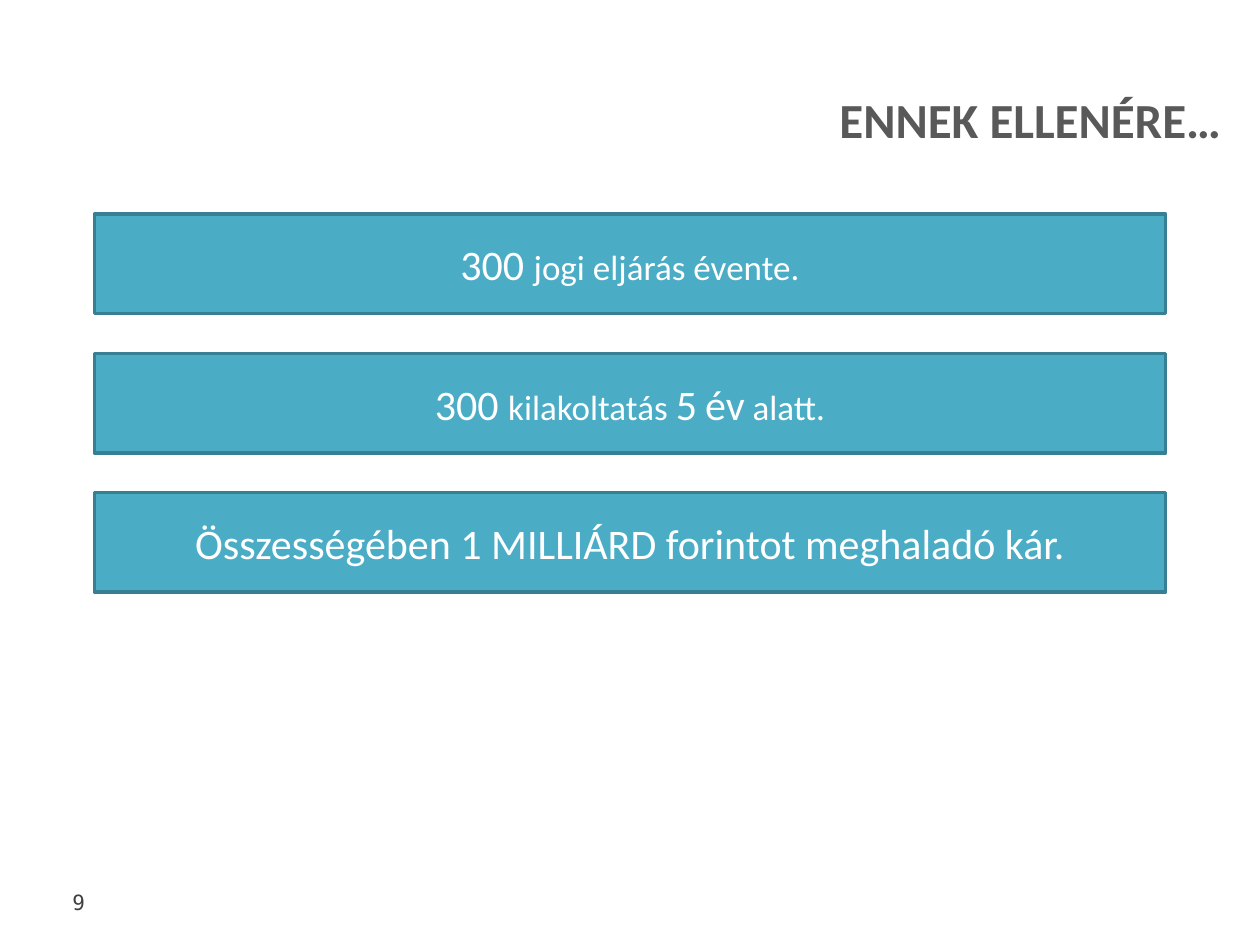
from pptx import Presentation
from pptx.dml.color import RGBColor
from pptx.enum.shapes import MSO_SHAPE as Shape
from pptx.enum.text import MSO_ANCHOR as Anchor, PP_ALIGN as Align
from pptx.util import Inches, Pt

TEAL = RGBColor(0x4B, 0xAC, 0xC6)
DARK_TEAL = RGBColor(0x37, 0x7F, 0x92)
TITLE_GRAY = RGBColor(0x59, 0x59, 0x59)
NUMBER_GRAY = RGBColor(0x40, 0x40, 0x40)
WHITE = RGBColor(0xFF, 0xFF, 0xFF)

LARGE, SMALL = 24, 20
BAR_TOP, BAR_STEP = 1.7, 1.105
BARS = [
    [("300 ", LARGE), ("jogi eljárás évente.", SMALL)],
    [("300 ", LARGE), ("kilakoltatás ", SMALL), ("5", LARGE), (" ", SMALL),
     ("év", LARGE), (" alatt.", SMALL)],
    [("Összességében 1 MILLIÁRD forintot meghaladó kár.", LARGE)],
]


def add_run(paragraph, text, size, color, name="Calibri", bold=False):
    run = paragraph.add_run()
    run.text = text
    font = run.font
    font.name, font.size, font.bold = name, Pt(size), bold
    font.color.rgb = color


def prepare_frame(shape, align, anchor):
    """Set up a frame without margins and return its first paragraph."""
    frame = shape.text_frame
    frame.word_wrap = True
    frame.vertical_anchor = anchor
    frame.margin_left = frame.margin_right = 0
    frame.margin_top = frame.margin_bottom = 0
    paragraph = frame.paragraphs[0]
    paragraph.alignment = align
    return paragraph


def set_title(slide, text):
    title = slide.shapes.title
    title.left, title.top = Inches(0.55), Inches(0.71)
    title.width, title.height = Inches(9.14), Inches(0.84)
    paragraph = prepare_frame(title, Align.RIGHT, Anchor.TOP)
    add_run(paragraph, text, 28, TITLE_GRAY, bold=True)


def add_bar(slide, top, runs):
    bar = slide.shapes.add_shape(
        Shape.RECTANGLE, Inches(0.75), Inches(top), Inches(8.5), Inches(0.79))
    bar.shadow.inherit = False
    bar.fill.solid()
    bar.fill.fore_color.rgb = TEAL
    bar.line.color.rgb = DARK_TEAL
    bar.line.width = Pt(2)
    paragraph = prepare_frame(bar, Align.CENTER, Anchor.MIDDLE)
    for text, size in runs:
        add_run(paragraph, text, size, WHITE)


def add_page_number(slide, number):
    box = slide.shapes.add_textbox(
        Inches(0.35), Inches(7.06), Inches(0.55), Inches(0.24))
    paragraph = prepare_frame(box, Align.CENTER, Anchor.TOP)
    add_run(paragraph, number, 12, NUMBER_GRAY, "DejaVu Sans Mono")


def main():
    presentation = Presentation()
    presentation.slide_width, presentation.slide_height = Inches(10), Inches(7.5)
    # Title Only layout
    slide = presentation.slides.add_slide(presentation.slide_layouts[5])

    add_page_number(slide, "9")
    set_title(slide, "ENNEK ELLENÉRE…")

    # Evenly spaced statement bars
    for index, runs in enumerate(BARS):
        add_bar(slide, BAR_TOP + index * BAR_STEP, runs)

    presentation.save("out.pptx")


if __name__ == "__main__":
    main()
